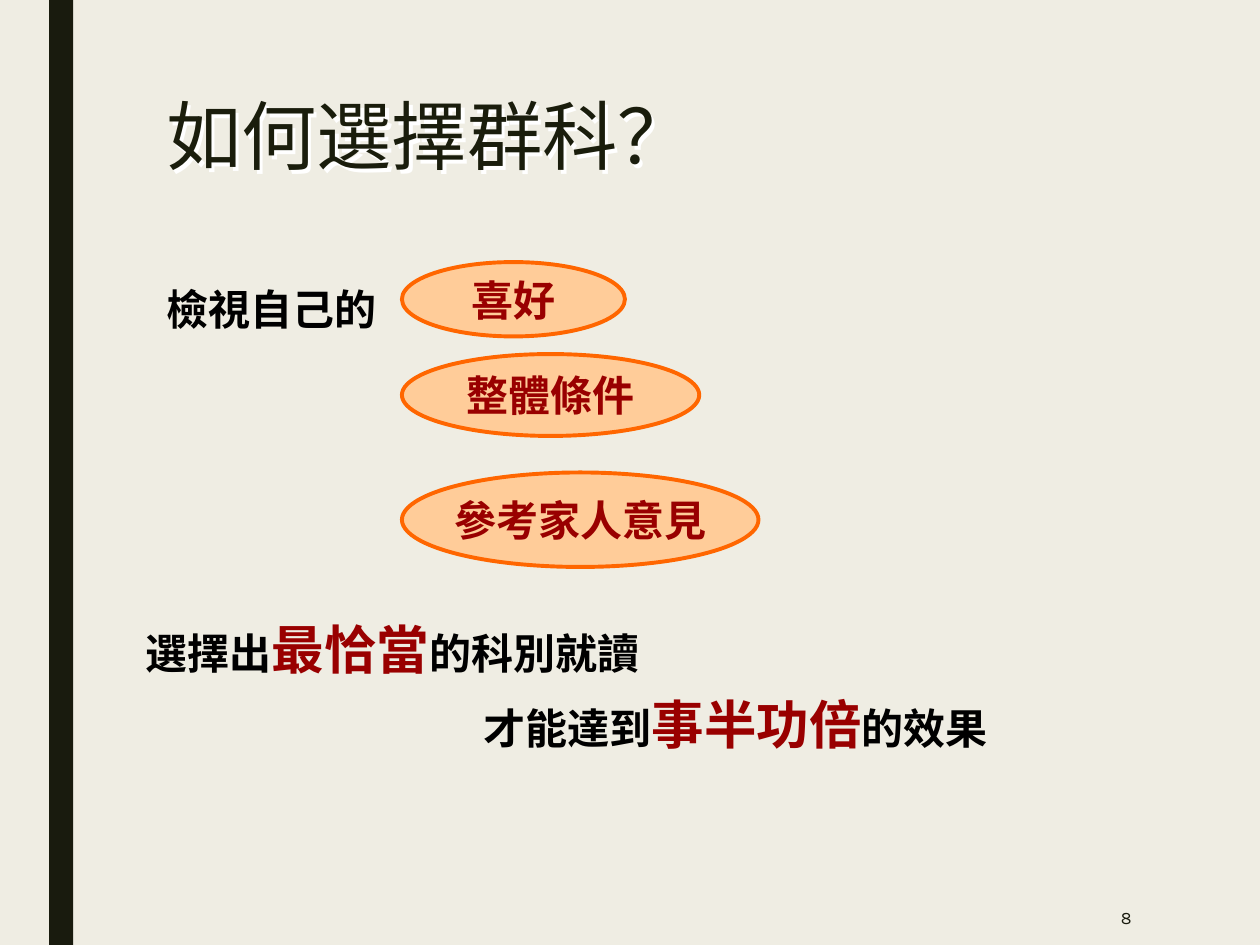
from dataclasses import dataclass

from lxml.etree import SubElement
from pptx import Presentation
from pptx.dml.color import RGBColor as RGB
from pptx.enum.shapes import MSO_SHAPE as SHAPE
from pptx.enum.text import MSO_ANCHOR as ANCHOR, MSO_AUTO_SIZE as AUTO, PP_ALIGN as ALIGN
from pptx.oxml.ns import qn
from pptx.util import Inches, Pt


@dataclass(frozen=True)
class Theme:
    paper: str = "EFEDE3"
    bar: str = "191B0E"
    title: str = "1A1D0C"
    text: str = "000000"
    accent: str = "990000"
    oval: str = "FFCC99"
    oval_line: str = "FF6600"
    shadow: str = "FFFFFF"
    cjk: str = "Noto Sans CJK SC"
    latin: str = "Karla"
    title_size: int = 43
    strong_size: int = 30
    body_size: int = 24
    number_size: int = 10


T = Theme()
BODY = dict(size=T.body_size, color=T.text, bold=True)
ACCENT = dict(size=T.body_size, color=T.accent, bold=True)
STRONG = dict(size=T.strong_size, color=T.accent, bold=True)


def set_attrs(obj, **values):
    for name, value in values.items():
        setattr(obj, name, value)


def place(sp, left, top, width, height):
    set_attrs(sp, left=Inches(left), top=Inches(top),
              width=Inches(width), height=Inches(height))


def add_run(p, text, size, color, bold=False, name=T.cjk):
    r = p.add_run()
    r.text = text
    set_attrs(r.font, size=Pt(size), bold=bold, name=name)
    r.font.color.rgb = RGB.from_string(color)
    SubElement(r.font._element, qn("a:ea"), typeface=name)


def fill_text(sp, runs, align=ALIGN.LEFT, **frame):
    tf = sp.text_frame
    set_attrs(tf, **{"word_wrap": True, "auto_size": AUTO.NONE, **frame})
    p = tf.paragraphs[0]
    p.alignment = align
    for text, style in runs:
        add_run(p, text, **style)


def add_shape(s, kind, box, fill, line=None):
    sp = s.shapes.add_shape(kind, *map(Inches, box))
    sp.shadow.inherit = False
    sp.fill.solid()
    sp.fill.fore_color.rgb = RGB.from_string(fill)
    if line:
        sp.line.color.rgb = RGB.from_string(line)
        sp.line.width = Pt(2.25)
    else:
        sp.line.fill.background()
    return sp


def add_text(s, box, runs, **frame):
    fill_text(s.shapes.add_textbox(*map(Inches, box)), runs, **frame)


def add_oval(s, top, width, height, text):
    sp = add_shape(s, SHAPE.OVAL, (3.19, top, width, height), T.oval, T.oval_line)
    fill_text(sp, [(text, ACCENT)], align=ALIGN.CENTER,
              vertical_anchor=ANCHOR.MIDDLE, word_wrap=False)


def add_title(s, text):
    sp = s.shapes.title
    place(sp, 1.22, 0.66, 5.22, 0.82)
    sp.fill.background()
    fill_text(sp, [(text, dict(size=T.title_size, color=T.title))],
              vertical_anchor=ANCHOR.MIDDLE)
    # White shadow down and to the right of the letters
    effects = SubElement(sp._element.spPr, qn("a:effectLst"))
    shadow = SubElement(effects, qn("a:outerShdw"), dist=str(Pt(2.8)),
                        dir="2700000", algn="ctr", rotWithShape="0")
    SubElement(shadow, qn("a:srgbClr"), val=T.shadow)


def main():
    prs = Presentation()
    set_attrs(prs, slide_width=Inches(10), slide_height=Inches(7.5))
    s = prs.slides.add_slide(prs.slide_layouts[5])

    # Background, side bar and page number
    s.background.fill.solid()
    s.background.fill.fore_color.rgb = RGB.from_string(T.paper)
    add_shape(s, SHAPE.RECTANGLE, (0.39, 0, 0.19, 7.5), T.bar)
    add_text(s, (7.77, 7.06, 1.31, 0.44),
             [("8", dict(size=T.number_size, color=T.bar, name=T.latin))],
             align=ALIGN.RIGHT, vertical_anchor=ANCHOR.MIDDLE)

    add_title(s, "如何選擇群科？")

    # What to look at
    add_text(s, (1.22, 2.09, 3.15, 0.6), [("檢視自己的", BODY)],
             margin_top=Inches(0.16), margin_bottom=0)
    for oval in [(2.08, 1.77, 0.59, "喜好"),
                 (2.81, 2.36, 0.65, "整體條件"),
                 (3.75, 2.83, 0.75, "參考家人意見")]:
        add_oval(s, *oval)

    # Conclusion, with the key words emphasised
    for box, before, key, after in [
            ((1.06, 4.7, 6.77, 0.73), "選擇出", "最恰當", "的科別就讀"),
            ((3.74, 5.29, 4.49, 0.73), "才能達到", "事半功倍", "的效果")]:
        add_text(s, box, [(before, BODY), (key, STRONG), (after, BODY)],
                 margin_top=Inches(0.2), margin_bottom=0)

    prs.save("out.pptx")


if __name__ == "__main__":
    main()
